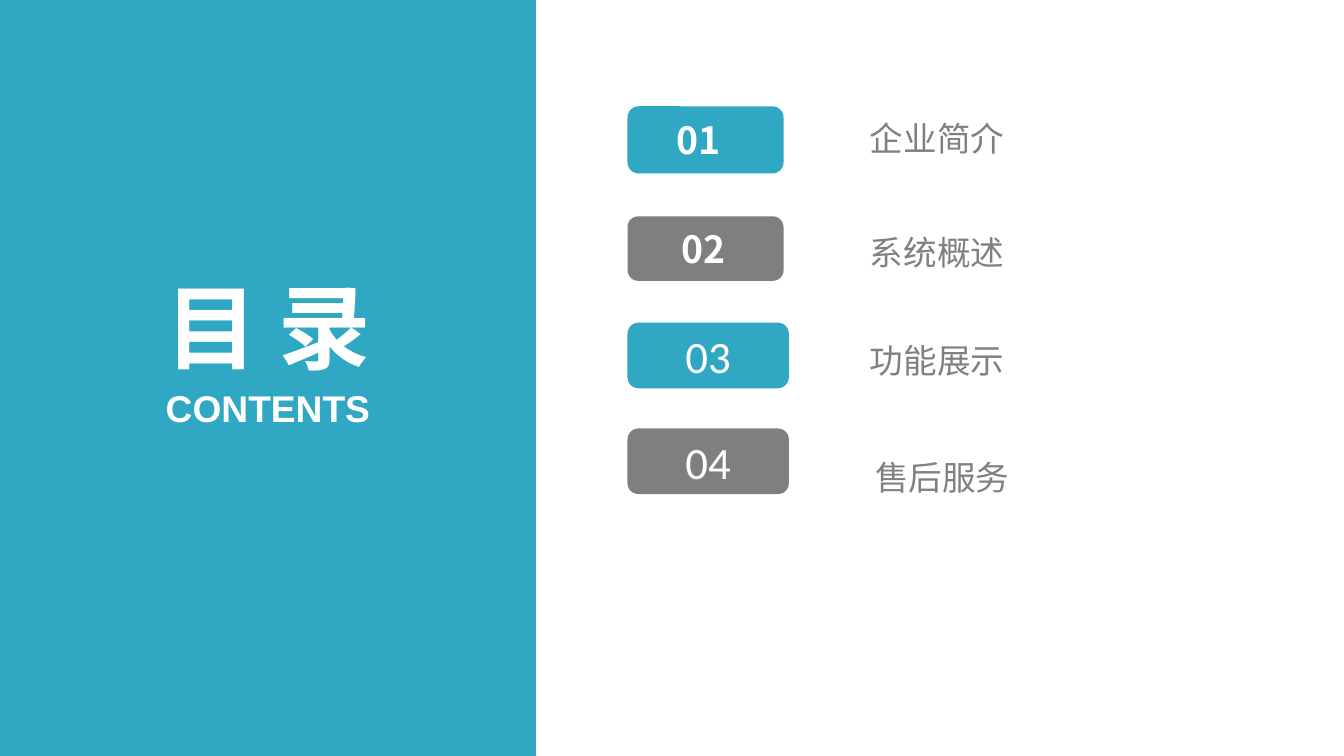
from dataclasses import dataclass

from lxml import etree
from pptx import Presentation
from pptx.dml.color import RGBColor
from pptx.enum import shapes, text
from pptx.oxml import ns
from pptx.util import Cm, Pt

TEAL = RGBColor(0x30, 0xA8, 0xC4)
GRAY = RGBColor(0x7F, 0x7F, 0x7F)
LABEL_GRAY = RGBColor(0x80, 0x80, 0x80)
WHITE = RGBColor(0xFF, 0xFF, 0xFF)
CJK = "Noto Sans CJK SC"


@dataclass(frozen=True)
class Style:
    font: str
    size: float
    color: RGBColor
    bold: bool = False


@dataclass(frozen=True)
class Box:
    """Position and size in centimetres."""
    left: float
    top: float
    width: float
    height: float

    def lengths(self) -> tuple:
        return Cm(self.left), Cm(self.top), Cm(self.width), Cm(self.height)


@dataclass(frozen=True)
class Entry:
    number: str
    label: str
    color: RGBColor
    style: Style
    badge: Box
    label_box: Box
    right_inset: float = 0.18


HEADING = Style("Arial", 49.5, WHITE, True)
SUBHEADING = Style("Arial", 19.9, WHITE, True)
BOLD_NUMBER = Style(CJK, 20, WHITE, True)
NUMBER = Style("Calibri", 24, WHITE)
LABEL = Style(CJK, 18, LABEL_GRAY)

ENTRIES = [
    Entry("01", "企业简介", TEAL, BOLD_NUMBER,
          Box(11.86, 2.01, 2.95, 1.27), Box(16.26, 1.75, 9.75, 1.52), 0.43),
    Entry("02", "系统概述", GRAY, BOLD_NUMBER,
          Box(11.86, 4.09, 2.95, 1.22), Box(16.26, 3.91, 9.75, 1.47), 0.25),
    Entry("03", "功能展示", TEAL, NUMBER,
          Box(11.86, 6.1, 3.05, 1.24), Box(16.26, 5.94, 9.75, 1.75)),
    Entry("04", "售后服务", GRAY, NUMBER,
          Box(11.86, 8.1, 3.05, 1.24), Box(16.36, 8.15, 9.68, 1.96)),
]


def write(shape, words: str, style: Style, align):
    """Fill the shape's only paragraph and return it."""
    para = shape.text_frame.paragraphs[0]
    para.text = words
    para.alignment = align
    font = para.font
    font.size, font.bold = Pt(style.size), style.bold
    font.color.rgb = style.color
    font.name = style.font
    if style.font == CJK:
        properties = para._p.pPr.find(ns.qn("a:defRPr"))
        etree.SubElement(properties, ns.qn("a:ea"), typeface=CJK)
    return para


def set_insets(frame, side: float, upright: float) -> None:
    frame.margin_left = frame.margin_right = Cm(side)
    frame.margin_top = frame.margin_bottom = Cm(upright)


def add_block(page, kind, box: Box, color: RGBColor):
    block = page.shapes.add_shape(kind, *box.lengths())
    block.shadow.inherit = False
    block.fill.solid()
    block.fill.fore_color.rgb = color
    block.line.fill.background()
    return block


def add_heading(page, words: str, box: Box, style: Style) -> None:
    heading = page.shapes.add_textbox(*box.lengths())
    set_insets(heading.text_frame, 0, 0)
    heading.text_frame.word_wrap = False
    heading.text_frame.auto_size = text.MSO_AUTO_SIZE.SHAPE_TO_FIT_TEXT
    write(heading, words, style, text.PP_ALIGN.CENTER)


def add_entry(page, entry: Entry) -> None:
    badge = add_block(page, shapes.MSO_SHAPE.ROUNDED_RECTANGLE, entry.badge, entry.color)
    set_insets(badge.text_frame, 0.18, 0.1)
    badge.text_frame.margin_right = Cm(entry.right_inset)
    badge.text_frame.vertical_anchor = text.MSO_ANCHOR.MIDDLE
    write(badge, entry.number, entry.style, text.PP_ALIGN.CENTER)

    label = page.shapes.add_textbox(*entry.label_box.lengths())
    set_insets(label.text_frame, 0.18, 0.1)
    label.text_frame.word_wrap = True
    para = write(label, entry.label, LABEL, text.PP_ALIGN.LEFT)
    para.line_spacing = 1.5
    para.space_before = Pt(5.7)


def main() -> None:
    deck = Presentation()
    deck.slide_width, deck.slide_height = Cm(25.4), Cm(14.29)
    page = deck.slides.add_slide(deck.slide_layouts[6])
    add_block(page, shapes.MSO_SHAPE.RECTANGLE, Box(0, 0, 10.13, 14.29), TEAL)
    add_heading(page, "目 录", Box(3.07, 5.11, 4.01, 2.11), HEADING)
    add_heading(page, "CONTENTS", Box(3.12, 7.29, 3.89, 0.86), SUBHEADING)
    for entry in ENTRIES:
        add_entry(page, entry)
    deck.save("out.pptx")


if __name__ == "__main__":
    main()
